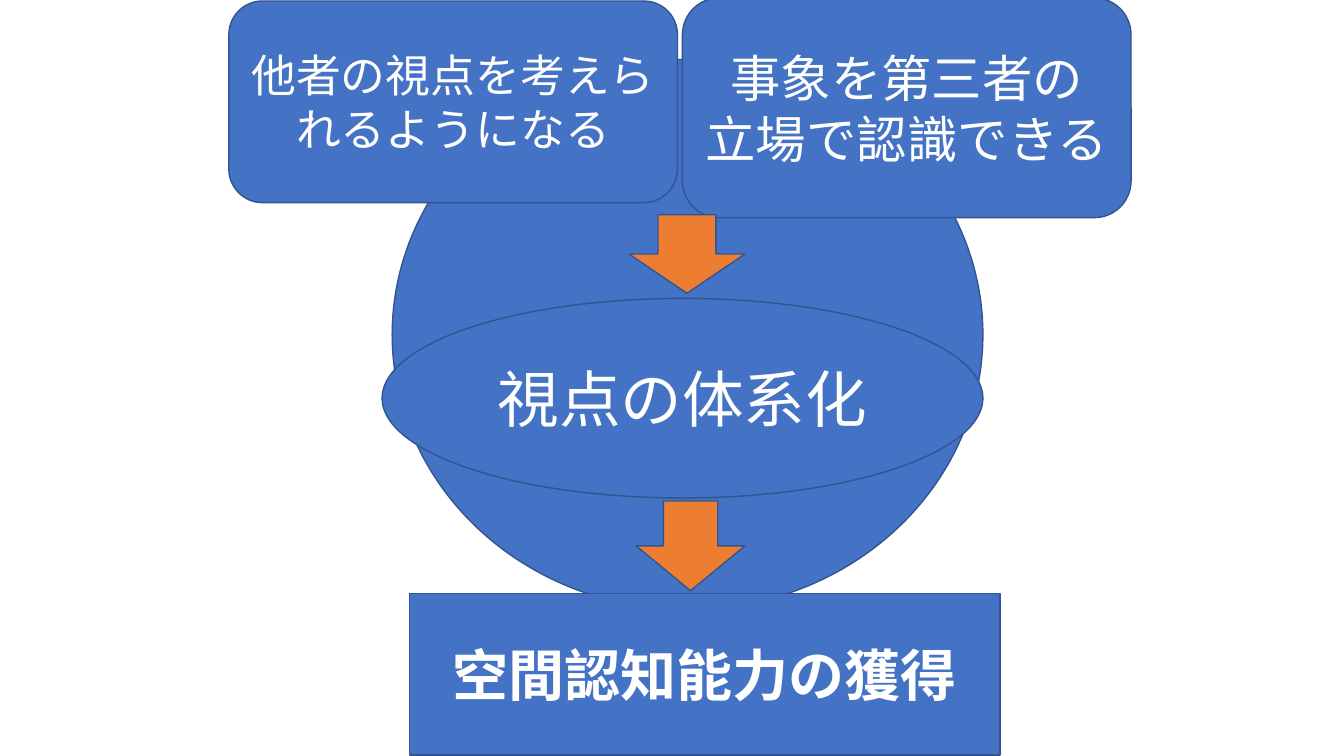
import pptx
import pptx.dml.color
import pptx.enum.shapes
import pptx.enum.text
import pptx.oxml
import pptx.oxml.ns
import pptx.util

SLIDE_WIDTH = pptx.util.Inches(13.33)
SLIDE_HEIGHT = pptx.util.Inches(7.5)
FONT = "Noto Sans CJK JP"
BLUE, ORANGE, OUTLINE, WHITE = "4472C4", "ED7D31", "325491", "FFFFFF"
PRESET = pptx.enum.shapes.MSO_SHAPE


def color(hex_code):
    return pptx.dml.color.RGBColor.from_string(hex_code)


def across(percent):
    return round(SLIDE_WIDTH * percent / 100)


def down(percent):
    return round(SLIDE_HEIGHT * percent / 100)


def add_figure(slide, preset, left, top, width, height, fill=BLUE):
    figure = slide.shapes.add_shape(
        preset, across(left), down(top), across(width), down(height)
    )
    figure.shadow.inherit = False
    figure.fill.solid()
    figure.fill.fore_color.rgb = color(fill)
    figure.line.color.rgb = color(OUTLINE)
    figure.line.width = pptx.util.Pt(1)
    return figure


def write_run(paragraph, wording, size, bold):
    run = paragraph.add_run()
    run.text = wording
    run.font.name = FONT
    run.font.size = pptx.util.Pt(size)
    run.font.bold = bold
    run.font.color.rgb = color(WHITE)
    east_asian = pptx.oxml.parse_xml(
        f'<a:ea {pptx.oxml.ns.nsdecls("a")} typeface="{FONT}"/>'
    )
    run.font._element.find(pptx.oxml.ns.qn("a:latin")).addnext(east_asian)


def write_label(figure, lines, size, bold=False):
    frame = figure.text_frame
    frame.word_wrap = True
    frame.vertical_anchor = pptx.enum.text.MSO_ANCHOR.MIDDLE
    for index, wording in enumerate(lines):
        paragraph = frame.add_paragraph() if index else frame.paragraphs[0]
        paragraph.alignment = pptx.enum.text.PP_ALIGN.CENTER
        write_run(paragraph, wording, size, bold)


def add_arrow(slide, left, top, width, height):
    add_figure(slide, PRESET.DOWN_ARROW, left, top, width, height, ORANGE)


def main():
    deck = pptx.Presentation()
    deck.slide_width = SLIDE_WIDTH
    deck.slide_height = SLIDE_HEIGHT
    slide = deck.slides.add_slide(deck.slide_layouts[6])

    add_figure(slide, PRESET.OVAL, 29.18, 7.87, 43.95, 72.8)

    others_view = add_figure(
        slide, PRESET.ROUNDED_RECTANGLE, 17.03, 0.13, 33.38, 26.67
    )
    write_label(others_view, ["他者の視点を考えられるようになる"], 32)

    third_party_view = add_figure(
        slide, PRESET.ROUNDED_RECTANGLE, 50.78, -0.27, 33.38, 29.07
    )
    write_label(third_party_view, ["事象を第三者の", "立場で認識できる"], 36)

    systematization = add_figure(slide, PRESET.OVAL, 28.43, 39.47, 44.7, 26.4)
    write_label(systematization, ["視点の体系化"], 44)

    add_arrow(slide, 46.8, 28.4, 8.63, 10.4)
    add_arrow(slide, 47.33, 66.27, 8.1, 11.87)

    spatial_ability = add_figure(
        slide, PRESET.RECTANGLE, 30.45, 78.53, 43.95, 21.33
    )
    write_label(spatial_ability, ["空間認知能力の獲得"], 40, bold=True)

    deck.save("out.pptx")


if __name__ == "__main__":
    main()
